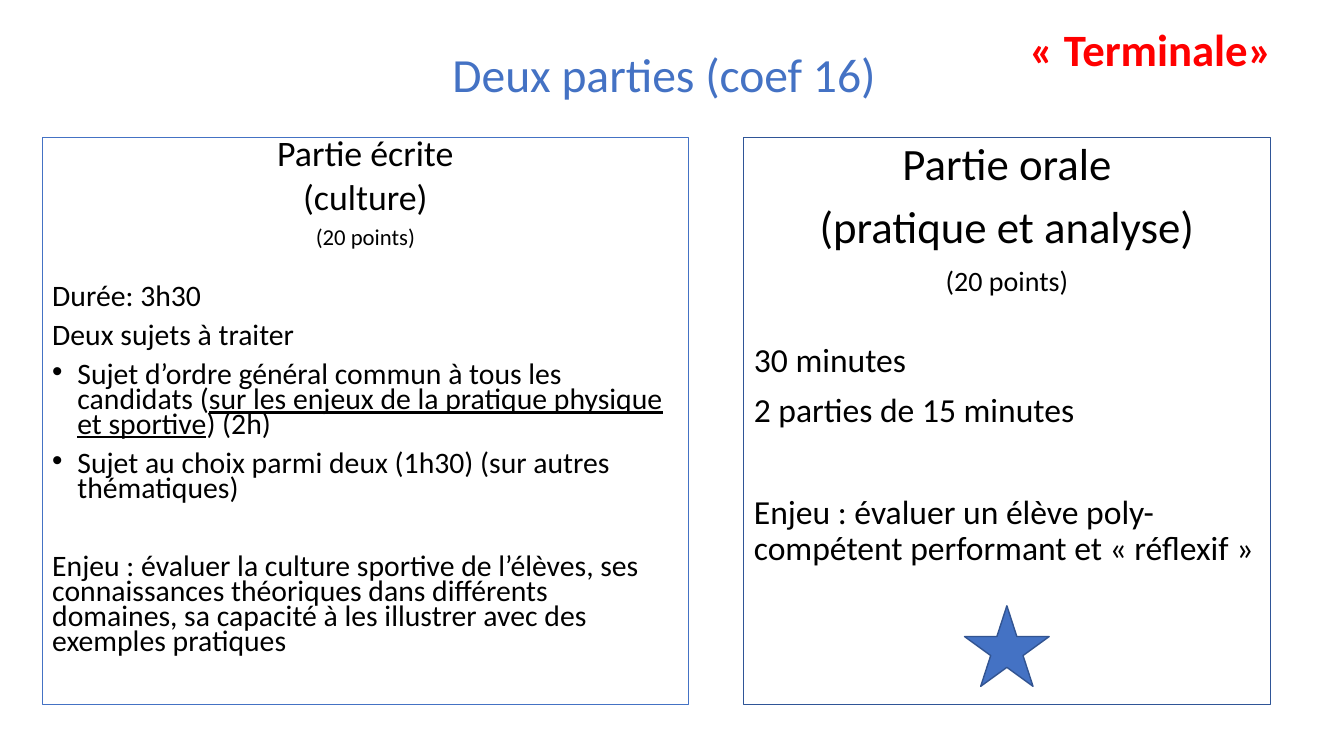
from lxml.etree import SubElement
from pptx import Presentation
from pptx.dml.color import RGBColor
from pptx.enum.shapes import MSO_SHAPE
from pptx.enum.text import MSO_ANCHOR, MSO_AUTO_SIZE, PP_ALIGN
from pptx.oxml.ns import qn
from pptx.util import Pt

BLUE = RGBColor(0x44, 0x72, 0xC4)
DARK_BLUE = RGBColor(0x2F, 0x55, 0x97)
STAR_EDGE = RGBColor(0x32, 0x54, 0x91)
RED = RGBColor(0xFF, 0x00, 0x00)
BLACK = RGBColor(0x00, 0x00, 0x00)

PANEL_TOP, PANEL_HEIGHT = 97.9, 405.4
BULLET_INDENT = 18


class SlideBuilder:
    """Holds the text style and the current slide."""

    font_name = "Calibri"
    space_before = 10

    def __init__(self, presentation):
        self.slide = presentation.slides.add_slide(presentation.slide_layouts[5])

    def format_paragraph(self, paragraph, size, color, spacing, align=PP_ALIGN.LEFT, before=0):
        paragraph.alignment = align
        paragraph.line_spacing = spacing
        paragraph.space_before = Pt(before)
        paragraph.font.name = self.font_name
        paragraph.font.size = Pt(size)
        paragraph.font.color.rgb = color

    def title(self, text, left, top, width, height):
        shape = self.slide.shapes.title
        shape.left, shape.top, shape.width, shape.height = map(Pt, (left, top, width, height))
        frame = shape.text_frame
        frame.text = text
        frame.auto_size = MSO_AUTO_SIZE.NONE
        frame.vertical_anchor = MSO_ANCHOR.MIDDLE
        paragraph = frame.paragraphs[0]
        self.format_paragraph(paragraph, 32, RED, 0.9, PP_ALIGN.CENTER)
        paragraph.font.bold = True

    def heading(self, text, left, top, width, height):
        shape = self.slide.shapes.add_textbox(*map(Pt, (left, top, width, height)))
        shape.text_frame.word_wrap = True
        paragraph = shape.text_frame.paragraphs[0]
        paragraph.text = text
        self.format_paragraph(paragraph, 34, BLUE, 0.8, before=self.space_before)

    def shape(self, kind, left, top, width, height, line_color, line_width, fill=None):
        shape = self.slide.shapes.add_shape(kind, *map(Pt, (left, top, width, height)))
        shape.shadow.inherit = False
        shape.line.color.rgb = line_color
        shape.line.width = Pt(line_width)
        if fill is None:
            shape.fill.background()
        else:
            shape.fill.solid()
            shape.fill.fore_color.rgb = fill
        return shape

    def panel(self, left, width, line_color, spacing, head, body):
        """Head lines are centred (text, size); body lines are (runs, size, extra gap, bullet)."""
        panel = self.shape(MSO_SHAPE.RECTANGLE, left, PANEL_TOP, width, PANEL_HEIGHT, line_color, 0.75)
        frame = panel.text_frame
        frame.word_wrap = True
        frame.vertical_anchor = MSO_ANCHOR.TOP
        lines = [([text], size, 0, False, PP_ALIGN.CENTER) for text, size in head]
        lines += [(*line, PP_ALIGN.LEFT) for line in body]
        for index, (runs, size, gap, bullet, align) in enumerate(lines):
            paragraph = frame.add_paragraph() if index else frame.paragraphs[0]
            self.format_paragraph(paragraph, size, BLACK, spacing, align, self.space_before + gap)
            # Every second run is underlined
            for position, text in enumerate(runs):
                run = paragraph.add_run()
                run.text = text
                if position % 2:
                    run.font.underline = True
            if bullet:
                self.bullet(paragraph)

    def bullet(self, paragraph):
        properties = paragraph._p.get_or_add_pPr()
        properties.set("marL", str(Pt(BULLET_INDENT)))
        properties.set("indent", str(-Pt(BULLET_INDENT)))
        font = SubElement(properties, qn("a:buFont"))
        font.set("typeface", "Arial")
        character = SubElement(properties, qn("a:buChar"))
        character.set("char", "•")
        # Default run properties come after the bullet in the schema
        defaults = properties.find(qn("a:defRPr"))
        if defaults is not None:
            properties.append(defaults)


def main():
    presentation = Presentation()
    presentation.slide_width, presentation.slide_height = Pt(960), Pt(540)
    builder = SlideBuilder(presentation)

    # Titles
    builder.title("« Terminale»", 689, 2.9, 266.4, 68.4)
    builder.heading("Deux parties (coef 16)", 316.1, 36.7, 328.3, 45.4)

    # Written part
    builder.panel(
        30.2, 461.5, BLUE, 0.7,
        [("Partie écrite", 25.6), ("(culture)", 25.6), ("(20 points)", 16.2)],
        [
            (["Durée: 3h30"], 21.2, 16.4, False),
            (["Deux sujets à traiter"], 21.2, 0, False),
            (["Sujet d’ordre général commun à tous les candidats (",
              "sur les enjeux de la pratique physique et sportive",
              ") (2h)"], 21.2, 0, True),
            (["Sujet au choix parmi deux (1h30) (sur autres thématiques)"], 21.2, 0, True),
            (["Enjeu : évaluer la culture sportive de l’élèves, ses connaissances théoriques "
              "dans différents domaines, sa capacité à les illustrer avec des exemples pratiques"],
             21.2, 28.1, False),
        ])

    # Oral part
    builder.panel(
        531.4, 375.8, DARK_BLUE, 0.9,
        [("Partie orale", 32), ("(pratique et analyse)", 32), ("(20 points)", 20)],
        [
            (["30 minutes"], 24, 23.2, False),
            (["2 parties de 15 minutes"], 24, 0, False),
            (["Enjeu : évaluer un élève poly-compétent performant et « réflexif »"], 24, 36.4, False),
        ])
    builder.shape(MSO_SHAPE.STAR_5_POINT, 689, 432.7, 60.5, 57.6, STAR_EDGE, 1, BLUE)

    presentation.save("out.pptx")


if __name__ == "__main__":
    main()
